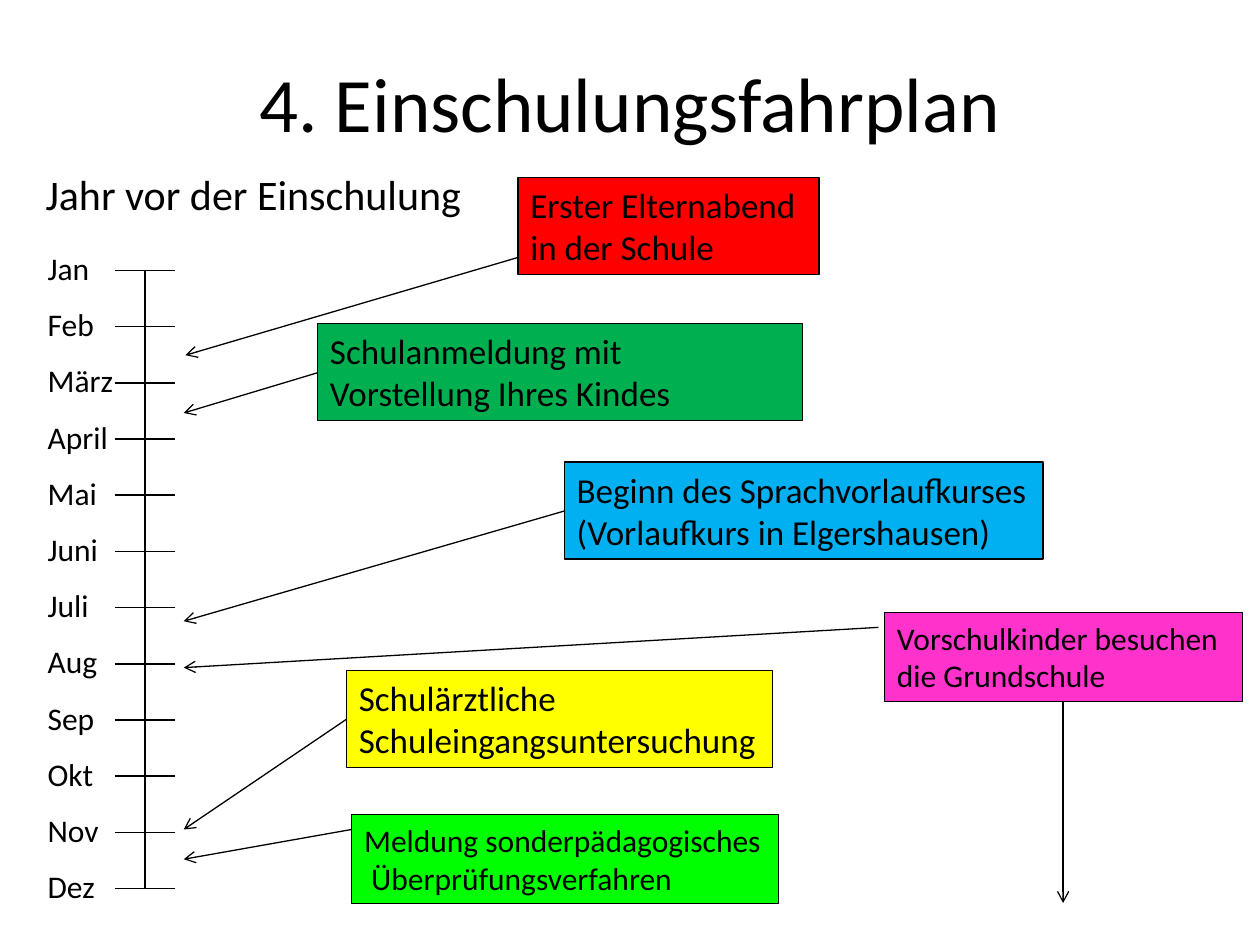
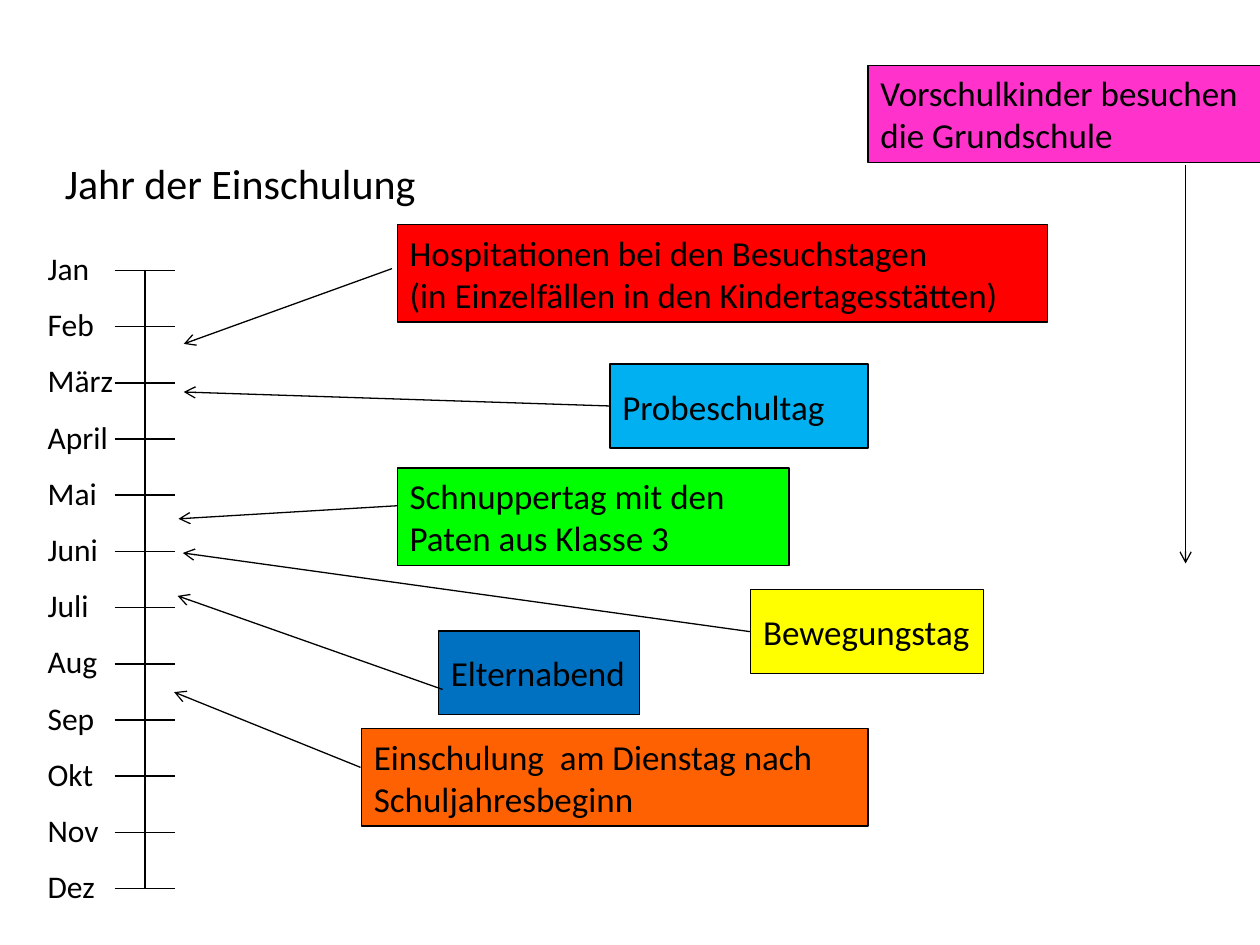
from pptx import Presentation
from pptx.dml.color import RGBColor
from pptx.enum.shapes import MSO_CONNECTOR, MSO_SHAPE
from pptx.enum.text import MSO_ANCHOR, MSO_AUTO_SIZE, PP_ALIGN
from pptx.oxml.ns import qn
from pptx.util import Pt
from lxml.etree import SubElement

FONT = "Calibri"
BLACK = "000000"
RED = "FF0000"
GREEN = "00B050"
LIME = "00FF00"
SKY = "00B0F0"
BLUE = "0070C0"
PINK = "FF33CC"
YELLOW = "FFFF00"
ORANGE = "FD6101"
PLAIN = "{2D5ABB26-0587-4C30-8999-92F81FD0307C}"
MONTHS = "Jan Feb März April Mai Juni Juli Aug Sep Okt Nov Dez".split()
STEP = 32.14

FIRST = [
    (RED, "Erster Elternabend\nin der Schule",
     (296, 101.5, 172, 55.5), {}, [(296.5, 147, 106, 203)]),
    (GREEN, "Schulanmeldung mit Vorstellung Ihres Kindes",
     (181.5, 185, 277, 55.5), {"wrap": True}, [(181.5, 213, 105, 236)]),
    (YELLOW, "Schulärztliche\nSchuleingangsuntersuchung",
     (198, 383, 243.5, 55.5), {}, [(198, 411, 105, 474)]),
    (SKY, "Beginn des Sprachvorlaufkurses\n(Vorlaufkurs in Elgershausen)",
     (322.5, 264, 273.5, 55.5), {}, [(322.5, 292, 105, 355)]),
    (LIME, "Meldung sonderpädagogisches\n Überprüfungsverfahren",
     (201, 465.5, 244, 51), {"size": 18}, [(201, 474, 105, 491)]),
    (PINK, "Vorschulkinder besuchen\ndie Grundschule",
     (505.5, 350, 204.5, 51), {"size": 18},
     [(502, 358.5, 105, 381.5), (607.5, 401, 607.5, 516)]),
]

SECOND = [
    (RED, "Hospitationen bei den Besuchstagen\n(in Einzelfällen in den Kindertagesstätten)",
     (227, 128.5, 371.5, 55.5), {"wrap": True}, [(224, 153.5, 105, 196.5)]),
    (SKY, "Probeschultag",
     (348.5, 208, 147.5, 48), {"wrap": True, "middle": True}, [(348.5, 232, 105, 224)]),
    (PINK, "Vorschulkinder besuchen\ndie Grundschule",
     (496, 37.5, 225.5, 55.5), {}, [(677.5, 94.5, 677.5, 322)]),
    (YELLOW, "Bewegungstag",
     (429, 337, 133, 48), {"middle": True}, [(429, 361, 104.5, 316)]),
    (LIME, "Schnuppertag mit den Paten aus Klasse 3",
     (227, 267.5, 224, 55.5), {"wrap": True, "middle": True}, [(227, 289, 102, 296.5)]),
    (ORANGE, "Einschulung  am Dienstag nach Schuljahresbeginn",
     (206.5, 416.5, 289.5, 55.5), {"wrap": True}, [(206, 438.5, 99.5, 395.5)]),
    (BLUE, "Elternabend",
     (250.5, 360.5, 115, 48), {"middle": True}, [(253, 394, 101.5, 340.5)]),
]


def paint(part, shade):
    part.rgb = RGBColor.from_string(shade)


def points(place):
    return [Pt(length) for length in place]


def write(frame, text, size=20, align=PP_ALIGN.LEFT, wrap=None, middle=False, grow=False):
    if wrap is not None:
        frame.word_wrap = wrap
    if grow:
        frame.auto_size = MSO_AUTO_SIZE.SHAPE_TO_FIT_TEXT
    frame.vertical_anchor = MSO_ANCHOR.MIDDLE if middle else MSO_ANCHOR.TOP
    frame.text = text
    for line in frame.paragraphs:
        line.alignment = align
        for run in line.runs:
            run.font.name = FONT
            run.font.size = Pt(size)
            paint(run.font.color, BLACK)


def add_title(slide, text):
    title = slide.shapes.title
    title.left, title.top, title.width, title.height = points((36, 21.5, 648, 73))
    write(title.text_frame, text, size=44, align=PP_ALIGN.CENTER, middle=True)


def add_head(slide, text, place):
    label = slide.shapes.add_textbox(*points(place))
    write(label.text_frame, text, size=24, wrap=False, grow=True)


def add_box(slide, fill, text, place, wrap=False, **style):
    box = slide.shapes.add_shape(MSO_SHAPE.RECTANGLE, *points(place))
    box.shadow.inherit = False
    box.fill.solid()
    paint(box.fill.fore_color, fill)
    paint(box.line.color, BLACK)
    box.line.width = Pt(0.75)
    write(box.text_frame, text, wrap=wrap, grow=True, **style)


def add_arrow(slide, ends):
    arrow = slide.shapes.add_connector(MSO_CONNECTOR.STRAIGHT, *points(ends))
    paint(arrow.line.color, BLACK)
    arrow.line.width = Pt(0.75)
    props = arrow.line._get_or_add_ln()
    SubElement(props, qn("a:tailEnd"), type="arrow")
    SubElement(props.getparent(), qn("a:effectLst"))


def add_edge(cell, side):
    edge = SubElement(cell._tc.get_or_add_tcPr(), qn(f"a:ln{side}"), w=str(Pt(1)))
    fill = SubElement(edge, qn("a:solidFill"))
    SubElement(fill, qn("a:srgbClr"), val=BLACK)


def add_table(slide, rows, cols, left, top, width):
    frame = slide.shapes.add_table(rows, cols, *points((left, top, width, rows * STEP)))
    table = frame.table
    table.first_row = table.horz_banding = False
    table._tbl.tblPr.find(qn("a:tableStyleId")).text = PLAIN
    return table


def add_scale(slide):
    ticks = add_table(slide, len(MONTHS) - 1, 2, 65.5, 154.5, 34)
    for row in ticks.rows:
        for cell, sides in zip(row.cells, ("RTB", "LTB")):
            for side in sides:
                add_edge(cell, side)
            cell.fill.background()
    names = add_table(slide, len(MONTHS), 1, 20, 139.5, 57)
    for cell, month in zip(names.iter_cells(), MONTHS):
        cell.fill.background()
        write(cell.text_frame, month, size=18)


def add_plan(slide, head, place, events):
    add_scale(slide)
    add_head(slide, head, place)
    for fill, text, spot, style, arrows in events:
        add_box(slide, fill, text, spot, **style)
        for ends in arrows:
            add_arrow(slide, ends)


def main():
    deck = Presentation()
    deck.slide_width, deck.slide_height = Pt(720), Pt(540)
    slide = deck.slides.add_slide(deck.slide_layouts[5])
    add_title(slide, "4. Einschulungsfahrplan")
    add_plan(slide, " Jahr vor der Einschulung", (13.5, 93, 258.5, 36), FIRST)
    slide = deck.slides.add_slide(deck.slide_layouts[6])
    add_plan(slide, " Jahr der Einschulung", (24.5, 86.5, 222.5, 36), SECOND)
    deck.save("out.pptx")


if __name__ == "__main__":
    main()
